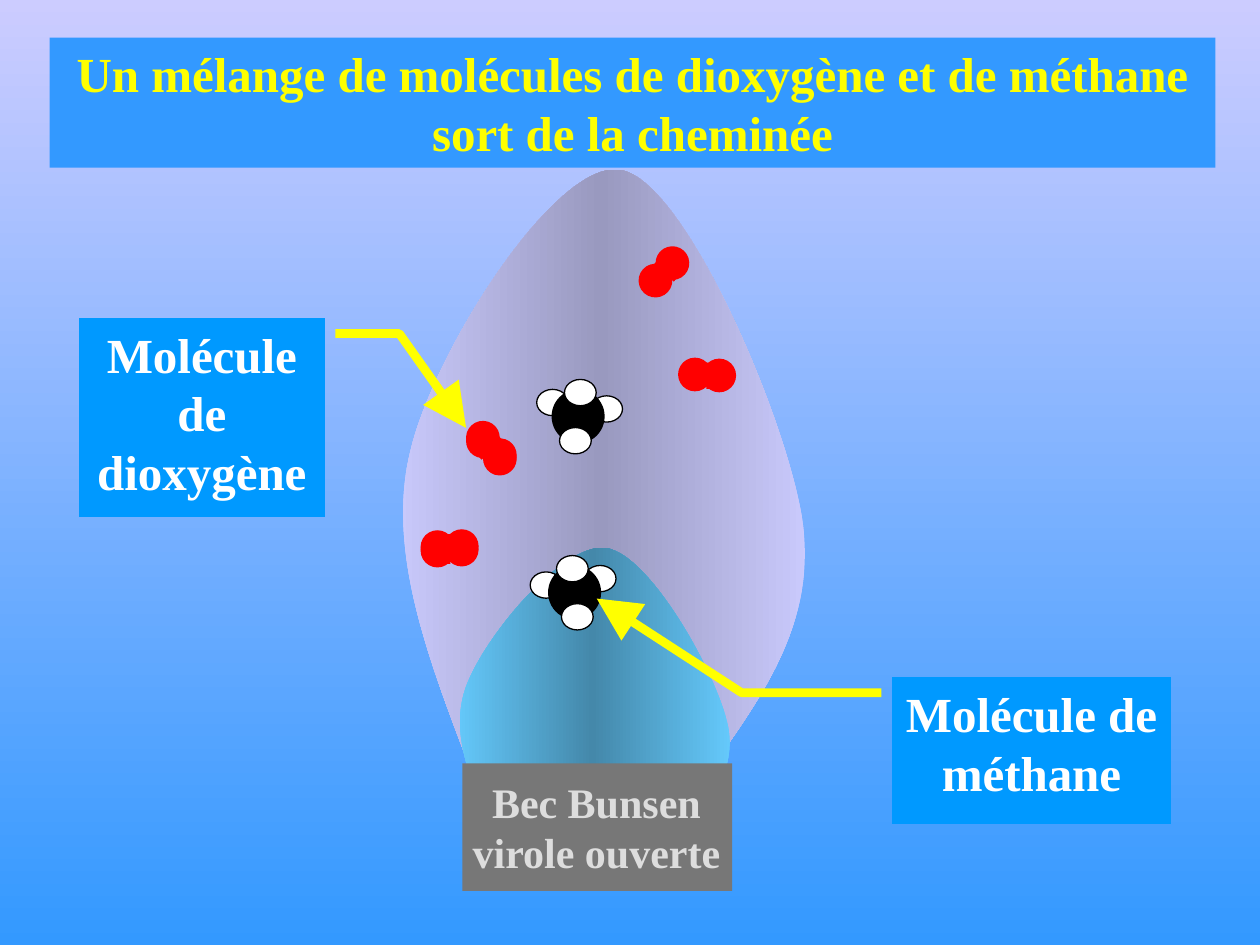
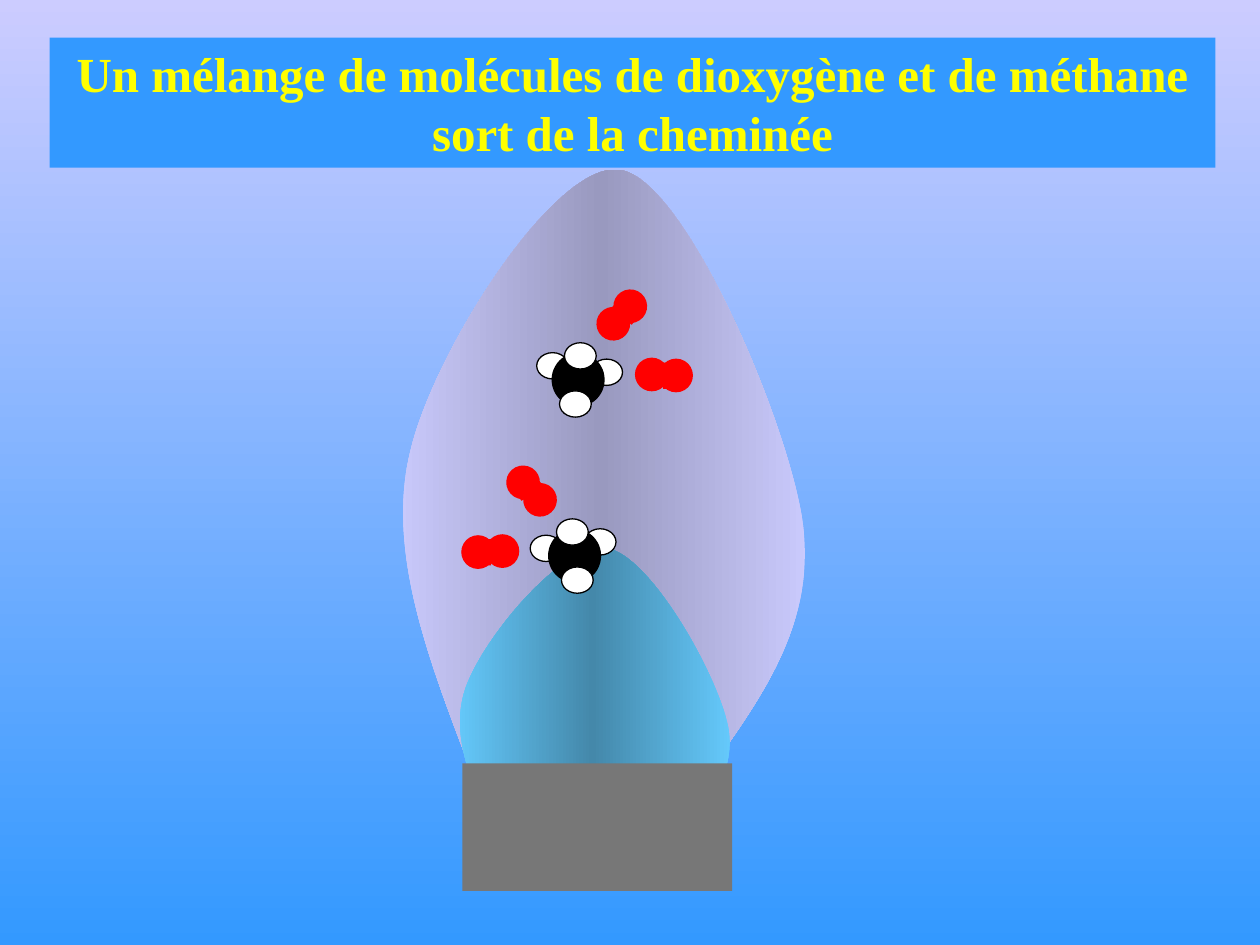
from copy import deepcopy

from lxml.etree import SubElement
from pptx import Presentation
from pptx.dml.color import RGBColor
from pptx.enum.shapes import MSO_SHAPE
from pptx.enum.text import MSO_ANCHOR, PP_ALIGN
from pptx.oxml.ns import qn
from pptx.util import Cm, Pt

HEX = {
    "sky": "CCCCFF", "deep": "3399FF", "title": "FFFF00", "label": "0099FF",
    "white": "FFFFFF", "black": "000000", "red": "FF0000",
    "burner": "777777", "pale": "DDDDDD",
    "haze": "9999BF", "gas": "66CCFF", "core": "4488AA",
}
RGB = {name: RGBColor.from_string(code) for name, code in HEX.items()}
FONT = "Times New Roman"
OVAL, RECT = MSO_SHAPE.OVAL, MSO_SHAPE.RECTANGLE

# Parts of each molecule: shape, left, top, width, height (cm), colour
OXYGEN = [
    (OVAL, 0, 0, 0.68, 0.68, "red"),
    (RECT, 0.57, 0.1, 0.22, 0.53, "red"),
    (OVAL, 0.49, 0.02, 0.68, 0.68, "red"),
    (RECT, 0.41, 0.12, 0.33, 0.46, "red"),
]
METHANE = [
    (OVAL, 1.09, 0.33, 0.64, 0.53, "white"),
    (OVAL, 0, 0.2, 0.64, 0.53, "white"),
    (OVAL, 0.3, 0.2, 1.07, 1.09, "black"),
    (OVAL, 0.56, 0, 0.64, 0.53, "white"),
    (OVAL, 0.46, 0.97, 0.64, 0.53, "white"),
]

# Flame outlines: a start point, then three points per curve (0.01 cm)
FLAMES = [
    ("sky", "haze", [
        (947, 1547), (864, 1328), (777, 1107), (828, 907),
        (876, 706), (1123, 318), (1252, 343),
        (1382, 366), (1588, 848), (1618, 1052),
        (1646, 1252), (1539, 1400), (1435, 1547)]),
    ("gas", "core", [
        (1019, 1720), (963, 1608), (904, 1496), (937, 1392),
        (970, 1290), (1135, 1092), (1222, 1105),
        (1311, 1118), (1448, 1364), (1468, 1466),
        (1486, 1567), (1415, 1643), (1344, 1720)]),
]

# Molecules on each slide: parts, left, top, turn, mirrored
SCENES = [
    [(OXYGEN, 12.8, 5.13, 311.9, False), (OXYGEN, 13.67, 7.21, 0, False),
     (OXYGEN, 9.32, 8.65, 48.1, True), (OXYGEN, 8.48, 10.67, 0, True),
     (OXYGEN, 9.32, 8.72, 48.1, True), (OXYGEN, 8.48, 10.74, 0, True),
     (METHANE, 10.82, 7.65, 0, False), (METHANE, 10.69, 11.2, 0, True)],
    [(OXYGEN, 11.95, 6, 311.9, False), (OXYGEN, 12.8, 7.21, 0, False),
     (OXYGEN, 10.13, 9.55, 48.1, True), (OXYGEN, 9.3, 10.77, 0, True),
     (METHANE, 10.82, 6.91, 0, False), (METHANE, 10.69, 10.46, 0, True)],
]
# Callouts: text, box, pointer as (y, x) shares of the box
NOTES = [
    ("Molécule de dioxygène", (1.59, 6.41, 4.96, 4.01),
     (0.079, 1.043, 0.079, 1.303, 0.553, 1.574)),
    ("Molécule de méthane", (17.98, 13.65, 5.63, 2.96),
     (0.107, -0.038, 0.107, -0.538, -0.535, -1.057)),
]


def paint(shape, fill):
    """Give a shape a plain fill, no outline and no shadow."""
    shape.shadow.inherit = False
    shape.fill.solid()
    shape.fill.fore_color.rgb = RGB[fill]
    shape.line.fill.background()


def write(shape, text, size, tint, wrap=True):
    frame = shape.text_frame
    frame.word_wrap = wrap
    frame.vertical_anchor = MSO_ANCHOR.TOP
    frame.text = text
    for para in frame.paragraphs:
        para.alignment = PP_ALIGN.CENTER
        para.font.name = FONT
        para.font.size = Pt(size)
        para.font.bold = True
        para.font.color.rgb = RGB[tint]


deck = Presentation()
deck.slide_width, deck.slide_height = Cm(25.4), Cm(19.05)
layout = deck.slide_layouts[6]
for holder in list(layout.placeholders):
    layout.shapes.element.remove(holder.element)

sky = deck.slide_master.background.fill
sky.gradient()
sky.gradient_angle = 270
for stop, name in zip(sky.gradient_stops, ("sky", "deep")):
    stop.color.rgb = RGB[name]

slides = [deck.slides.add_slide(layout) for scene in SCENES]

# The flames and the burner are drawn once, then moved to the layout
shapes = slides[0].shapes
fixed = []
for edge, mid, (start, *rest) in FLAMES:
    pen = shapes.build_freeform(*start, scale=Cm(0.01))
    pen.add_line_segments(rest, close=False)
    flame = pen.convert_to_shape()
    # Every three straight segments become one Bézier curve
    route = flame.element.find(".//" + qn("a:path"))
    lines = route.findall(qn("a:lnTo"))
    for i in range(0, len(lines), 3):
        curve = SubElement(route, qn("a:cubicBezTo"))
        for line in lines[i:i + 3]:
            curve.append(line[0])
            route.remove(line)
    flame.shadow.inherit = False
    flame.line.fill.background()
    flame.fill.gradient()
    flame.fill.gradient_angle = 0
    first, last = flame.fill.gradient_stops
    first.color.rgb, last.color.rgb = RGB[edge], RGB[mid]
    last.position = 0.5
    stops = flame.element.find(".//" + qn("a:gsLst"))
    end = deepcopy(stops[0])
    end.set("pos", "100000")
    stops.append(end)
    fixed.append(flame)

burner = shapes.add_shape(RECT, Cm(9.32), Cm(15.39), Cm(5.44), Cm(2.57))
paint(burner, "burner")
fixed.append(burner)
for shape in fixed:
    layout.shapes.element.append(shape.element)

for slide, scene in zip(slides, SCENES):
    title = slide.shapes.add_shape(RECT, Cm(1), Cm(0.76), Cm(23.5), Cm(2.62))
    paint(title, "deep")
    write(title, "Un mélange de molécules de dioxygène et de méthane "
                 "sort de la cheminée", 28, "title")
    for parts, x, y, turn, mirror in scene:
        group = slide.shapes.add_group_shape()
        for kind, dx, dy, w, h, fill in parts:
            atom = group.shapes.add_shape(
                kind, Cm(x + dx), Cm(y + dy), Cm(w), Cm(h))
            paint(atom, fill)
            if fill == "white":
                atom.line.color.rgb = RGB["black"]
                atom.line.width = Pt(0.75)
        group.rotation = turn
        if mirror:
            group.element.find(".//" + qn("a:xfrm")).set("flipH", "1")

for text, box, bends in NOTES:
    note = shapes.add_shape(MSO_SHAPE.LINE_CALLOUT_2_NO_BORDER, *map(Cm, box))
    for i, bend in enumerate(bends):
        note.adjustments[i] = bend
    paint(note, "label")
    note.line.color.rgb = RGB["title"]
    note.line.width = Pt(5)
    line = note.element.find(".//" + qn("a:ln"))
    SubElement(line, qn("a:tailEnd"), type="triangle", w="lg", len="lg")
    write(note, text, 28, "white")

name = shapes.add_textbox(Cm(9.27), Cm(15.52), Cm(5.51), Cm(2.29))
write(name, "Bec Bunsen\nvirole ouverte", 24, "pale", wrap=False)

deck.save("out.pptx")
